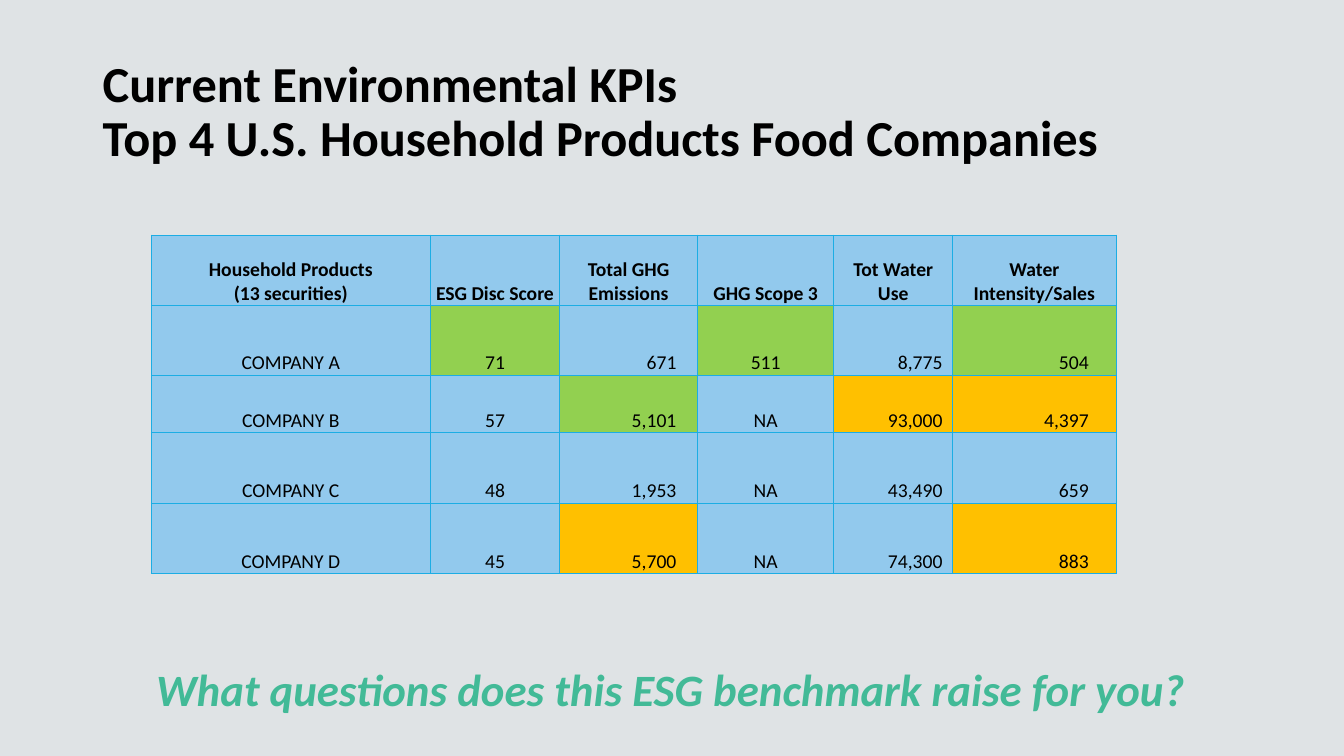
from dataclasses import dataclass

from lxml.etree import SubElement
from pptx import Presentation
from pptx.dml.color import RGBColor
from pptx.enum.text import MSO_ANCHOR as Anchor, PP_ALIGN as Align
from pptx.oxml.ns import qn
from pptx.util import Pt


@dataclass(frozen=True)
class Theme:
    font: str = "Calibri"
    background: str = "DFE3E5"
    ink: str = "000000"
    accent: str = "42BA97"
    border: str = "1CADE4"
    cell: str = "92C9ED"
    good: str = "92D050"
    poor: str = "FFC000"
    title_size: int = 36
    question_size: int = 32
    table_size: int = 14
    border_width: float = 0.5


HEADERS = ["Household Products\v(13 securities)", "ESG Disc Score", "Total GHG\vEmissions",
           "GHG Scope 3", "Tot Water\vUse", "Water\vIntensity/Sales"]
COMPANIES = [
    ["COMPANY A", "71", "671", "511", "8,775", "504"],
    ["COMPANY B", "57", "5,101", "NA", "93,000", "4,397"],
    ["COMPANY C", "48", "1,953", "NA", "43,490", "659"],
    ["COMPANY D", "45", "5,700", "NA", "74,300", "883"],
]
GOOD_CELLS = {(1, 1), (1, 3), (1, 5), (2, 2)}
POOR_CELLS = {(2, 4), (2, 5), (4, 2), (4, 5)}
NUMBER_INSETS = {2: 21, 4: 10, 5: 27}
COLUMN_WIDTHS = [277, 128, 137, 135, 118, 162]
ROW_HEIGHTS = [70, 69, 57, 70, 70]


class SlideBuilder:
    """Draws styled elements on one slide, with lengths in px at 100 to the inch."""

    def __init__(self, deck, theme):
        self.theme = theme
        self.page = deck.slides.add_slide(deck.slide_layouts[6])
        self.paint(self.page.background.fill, theme.background)

    @staticmethod
    def px(length):
        return length * 9144

    @staticmethod
    def paint(fill, color):
        fill.solid()
        fill.fore_color.rgb = RGBColor.from_string(color)

    def style(self, para, size, color, bold=False, italic=False):
        font = para.font
        font.name, font.size = self.theme.font, Pt(size)
        font.bold, font.italic = bold, italic
        font.color.rgb = RGBColor.from_string(color)

    def text(self, bounds, words, size, color, anchor=Anchor.TOP, spacing=1.0, italic=False):
        box = self.page.shapes.add_textbox(*map(self.px, bounds))
        frame = box.text_frame
        frame.word_wrap = True
        frame.vertical_anchor = anchor
        frame.text = words
        para = frame.paragraphs[0]
        para.line_spacing = spacing
        self.style(para, size, color, bold=True, italic=italic)

    def outline(self, cell):
        properties = cell._tc.get_or_add_tcPr()
        for index, side in enumerate(("a:lnL", "a:lnR", "a:lnT", "a:lnB")):
            line = SubElement(properties, qn(side), w=str(Pt(self.theme.border_width)))
            fill = SubElement(line, qn("a:solidFill"))
            SubElement(fill, qn("a:srgbClr"), val=self.theme.border)
            properties.insert(index, line)

    def cell(self, cell, words, color, bold, inset):
        cell.text = words
        cell.vertical_anchor = Anchor.BOTTOM
        cell.margin_left = cell.margin_top = self.px(1)
        cell.margin_right = self.px(inset or 1)
        cell.margin_bottom = 0
        para = cell.text_frame.paragraphs[0]
        para.alignment = Align.RIGHT if inset else Align.CENTER
        self.style(para, self.theme.table_size, self.theme.ink, bold=bold)
        self.paint(cell.fill, color)
        self.outline(cell)

    def table(self, left, top, rows):
        bounds = left, top, sum(COLUMN_WIDTHS), sum(ROW_HEIGHTS)
        frame = self.page.shapes.add_table(len(rows), len(COLUMN_WIDTHS), *map(self.px, bounds))
        table = frame.table
        table.first_row = table.horz_banding = False
        for column, width in zip(table.columns, COLUMN_WIDTHS):
            column.width = self.px(width)
        for row, height in zip(table.rows, ROW_HEIGHTS):
            row.height = self.px(height)
        shades = dict.fromkeys(GOOD_CELLS, self.theme.good)
        shades.update(dict.fromkeys(POOR_CELLS, self.theme.poor))
        for r, row in enumerate(rows):
            for c, words in enumerate(row):
                header = r == 0
                inset = 0 if header else NUMBER_INSETS.get(c, 0)
                color = shades.get((r, c), self.theme.cell)
                self.cell(table.cell(r, c), words, color, header, inset)


def main():
    theme = Theme()
    deck = Presentation()
    deck.slide_width, deck.slide_height = SlideBuilder.px(1333), SlideBuilder.px(750)
    slide = SlideBuilder(deck, theme)
    slide.text((92, 40, 1150, 145),
               "Current Environmental KPIs\vTop 4 U.S. Household Products Food Companies",
               theme.title_size, theme.ink, anchor=Anchor.MIDDLE, spacing=0.9)
    slide.text((145, 652, 1188, 64), "What questions does this ESG benchmark raise for you?",
               theme.question_size, theme.accent, italic=True)
    slide.table(150, 233, [HEADERS, *COMPANIES])
    deck.save("out.pptx")


if __name__ == "__main__":
    main()
